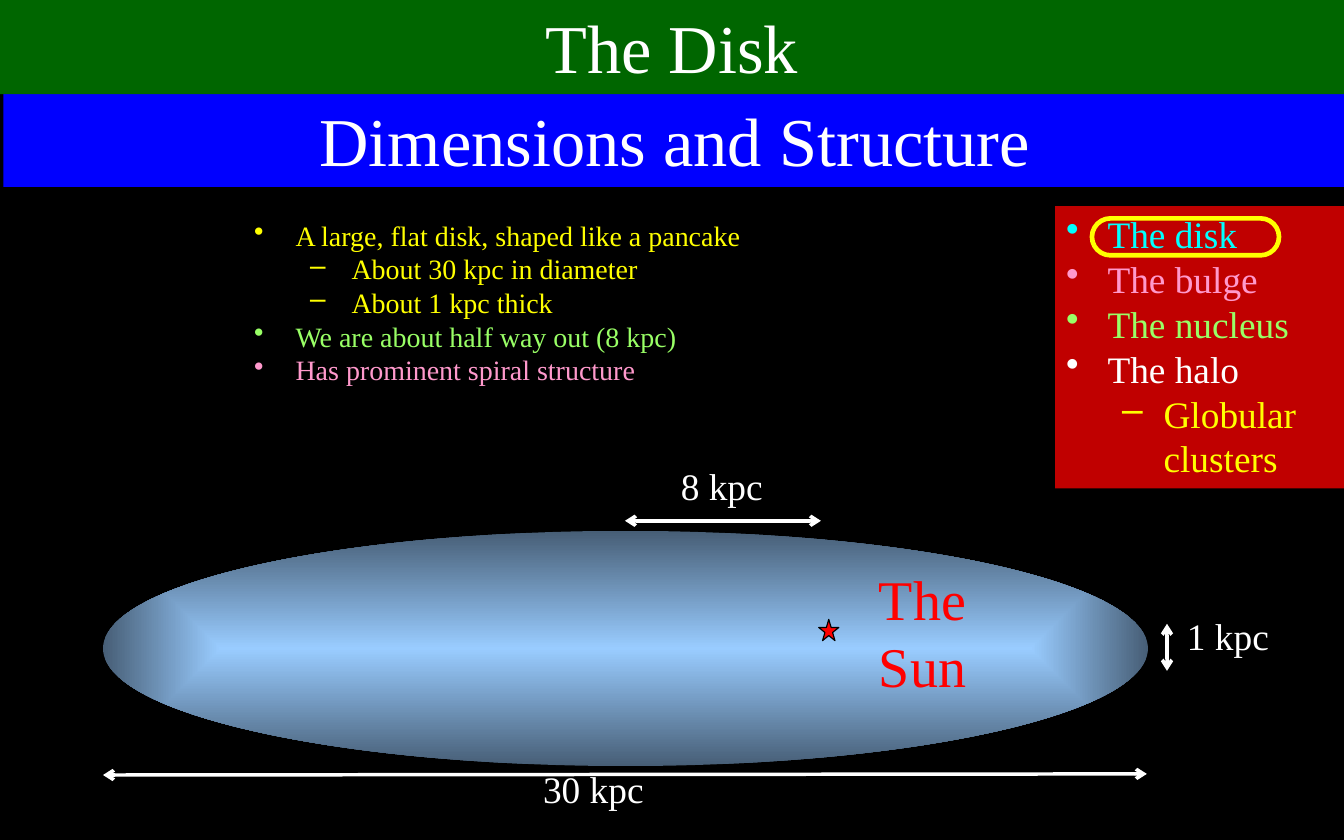
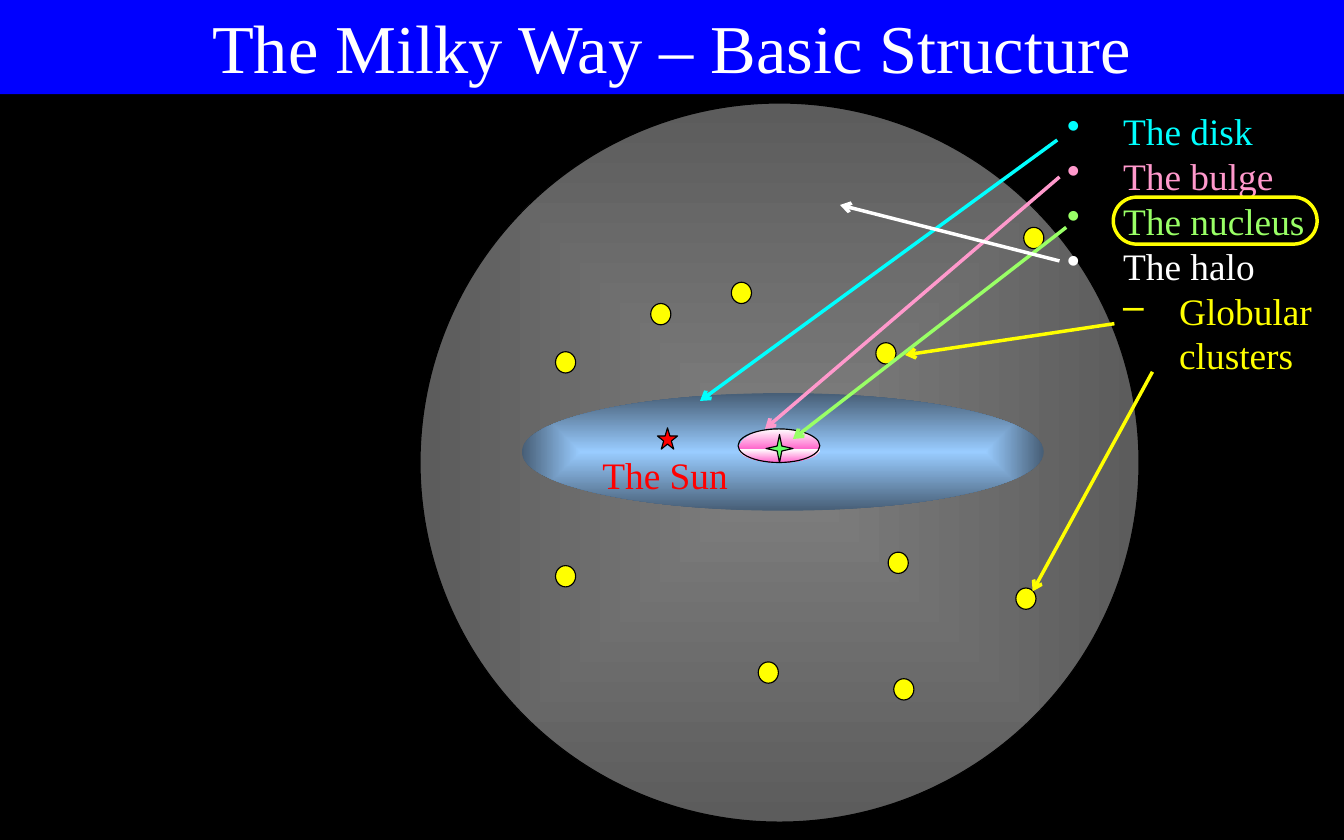
import math
import pptx
import pptx.dml.color
import pptx.enum.shapes
import pptx.enum.text
import pptx.oxml
import pptx.oxml.ns
import pptx.util

Inches = pptx.util.Inches
Pt = pptx.util.Pt
MSO = pptx.enum.shapes.MSO_SHAPE


class Theme:
    font = "Times New Roman"
    black = "000000"
    white = "FFFFFF"
    blue = "0000FF"
    green = "006600"
    crimson = "C00000"
    red = "FF0000"
    yellow = "FFFF00"
    cyan = "00FFFF"
    pink = "FF99CC"
    lime = "99FF66"
    nucleus = "66FF66"
    bulge = "FF66CC"
    disk = ("99CCFF", "475E76")
    halo = ("808080", "5C5C5C")
    title_size = 44
    large_size = 36
    label_size = 24
    body_size = 18
    outline = 0.75
    arrow = 2.25


RADIAL = ('<a:path path="shape"><a:fillToRect l="50000" t="50000" '
          'r="50000" b="50000"/></a:path>')
LINEAR = '<a:lin ang="5400000" scaled="1"/>'

PARTS = [
    ("The disk", 0, Theme.cyan),
    ("The bulge", 0, Theme.pink),
    ("The nucleus", 0, Theme.lime),
    ("The halo", 0, Theme.white),
    ("Globular clusters", 1, Theme.yellow),
]
DISK_FACTS = [
    ("A large, flat disk, shaped like a pancake", 0, Theme.yellow),
    ("About 30 kpc in diameter", 1, Theme.yellow),
    ("About 1 kpc thick", 1, Theme.yellow),
    ("We are about half way out (8 kpc)", 0, Theme.lime),
    ("Has prominent spiral structure", 0, Theme.pink),
]
CLUSTERS = [
    (7.82, 3.06), (5.81, 2.71), (4.96, 3.14), (6.53, 2.52), (4.96, 5.05),
    (6.77, 5.91), (7.93, 4.93), (9.14, 2.03), (7.98, 6.06), (9.07, 5.25),
]
POINTERS = [
    ((9.44, 1.25), (6.25, 3.58), Theme.cyan),
    ((9.46, 1.58), (6.83, 3.83), Theme.pink),
    ((9.52, 2.03), (7.08, 3.92), Theme.lime),
    ((9.46, 2.33), (7.5, 1.83), Theme.white),
    ((9.95, 2.89), (8.08, 3.17), Theme.yellow),
    ((10.29, 3.32), (9.22, 5.28), Theme.yellow),
]


def rgb(color):
    return pptx.dml.color.RGBColor.from_string(color)


def set_all(obj, values):
    for name, value in values.items():
        setattr(obj, name, value)


def xml(tag, attrs="", inner=""):
    ns = pptx.oxml.ns.nsdecls("a")
    return pptx.oxml.parse_xml(f"<a:{tag} {ns} {attrs}>{inner}</a:{tag}>")


def style_shape(sp, fill=None, line=None, width=Theme.outline):
    sp.shadow.inherit = False
    if fill:
        sp.fill.solid()
        sp.fill.fore_color.rgb = rgb(fill)
    else:
        sp.fill.background()
    if line:
        sp.line.color.rgb = rgb(line)
        sp.line.width = Pt(width)
    else:
        sp.line.fill.background()


def add_shape(slide, kind, box, **style):
    sp = slide.shapes.add_shape(kind, *map(Inches, box))
    style_shape(sp, **style)
    return sp


def set_gradient(sp, colors, direction):
    stops = "".join(
        f'<a:gs pos="{i * 100000}"><a:srgbClr val="{c}"/></a:gs>'
        for i, c in enumerate(colors))
    sp.fill.background()
    spPr = sp._element.spPr
    old = spPr.find(pptx.oxml.ns.qn("a:noFill"))
    new = xml("gradFill", 'rotWithShape="1"',
              f"<a:gsLst>{stops}</a:gsLst>{direction}")
    spPr.replace(old, new)


def add_glow(slide, box, colors, **style):
    sp = add_shape(slide, MSO.OVAL, box, **style)
    set_gradient(sp, colors, RADIAL)


def write(p, text, size, color):
    r = p.add_run()
    r.text = text
    set_all(r.font, {"name": Theme.font, "size": Pt(size)})
    r.font.color.rgb = rgb(color)


def prepare_frame(sp):
    tf = sp.text_frame
    set_all(tf, {
        "word_wrap": True,
        "vertical_anchor": pptx.enum.text.MSO_ANCHOR.TOP,
    })
    return tf


def add_label(slide, text, box, size=Theme.label_size, color=Theme.white):
    sp = slide.shapes.add_textbox(*map(Inches, box))
    write(prepare_frame(sp).paragraphs[0], text, size, color)


def add_band(slide, text, left, top, fill):
    sp = add_shape(slide, MSO.RECTANGLE, (left, top, 12, 0.84), fill=fill)
    p = prepare_frame(sp).paragraphs[0]
    p.alignment = pptx.enum.text.PP_ALIGN.CENTER
    write(p, text, Theme.title_size, Theme.white)


def add_bullets(slide, items, box, size, hang, fill=None):
    if fill:
        sp = add_shape(slide, MSO.RECTANGLE, box, fill=fill)
    else:
        sp = slide.shapes.add_textbox(*map(Inches, box))
    tf = prepare_frame(sp)
    for i, (text, level, color) in enumerate(items):
        p = tf.add_paragraph() if i else tf.paragraphs[0]
        set_all(p, {"level": level,
                    "alignment": pptx.enum.text.PP_ALIGN.LEFT})
        pPr = p._p.get_or_add_pPr()
        pPr.set("marL", str(Inches(hang + 0.5 * level)))
        pPr.set("indent", str(Inches(-hang)))
        pPr.append(xml("buChar", f'char="{"•–"[level]}"'))
        write(p, text, size, color)


def add_arrow(slide, start, end, color=Theme.white, both=False):
    sp = slide.shapes.add_connector(
        pptx.enum.shapes.MSO_CONNECTOR.STRAIGHT,
        *map(Inches, (*start, *end)))
    sp.line.color.rgb = rgb(color)
    sp.line.width = Pt(Theme.arrow)
    spPr = sp._element.spPr
    ln = spPr.find(pptx.oxml.ns.qn("a:ln"))
    for tag in ("headEnd", "tailEnd") if both else ("tailEnd",):
        ln.append(xml(tag, 'type="arrow"'))
    spPr.append(xml("effectLst"))


def add_highlight(slide, box, width):
    sp = add_shape(slide, MSO.ROUNDED_RECTANGLE, box,
                   line=Theme.yellow, width=width)
    sp.adjustments[0] = 0.5


def add_sun(slide, left, top):
    add_shape(slide, MSO.STAR_5_POINT, (left, top, 0.18, 0.19),
              fill=Theme.red, line=Theme.black)


def add_half_oval(slide, center, rx, ry, colors):
    cx, cy = center
    points = [(Inches(cx + rx * math.cos(a)), Inches(cy + ry * math.sin(a)))
              for a in (math.pi * i / 36 for i in range(37))]
    fb = slide.shapes.build_freeform(*points[0])
    fb.add_line_segments(points[1:], close=True)
    sp = fb.convert_to_shape()
    style_shape(sp)
    set_gradient(sp, colors, LINEAR)


def add_bulge(slide):
    center = (6.96, 4.01)
    add_half_oval(slide, center, 0.36, -0.18, (Theme.white, Theme.bulge))
    add_half_oval(slide, center, 0.36, 0.12, (Theme.white, Theme.bulge))
    add_shape(slide, MSO.OVAL, (6.59, 3.83, 0.73, 0.3), line=Theme.black)
    sp = add_shape(slide, MSO.STAR_4_POINT, (6.84, 3.88, 0.24, 0.25),
                   fill=Theme.nucleus, line=Theme.black)
    sp.adjustments[0] = 0.125


def add_slide(prs):
    slide = prs.slides.add_slide(prs.slide_layouts[6])
    fill = slide.background.fill
    fill.solid()
    fill.fore_color.rgb = rgb(Theme.black)
    return slide


def build_disk(prs):
    slide = add_slide(prs)
    add_band(slide, "Dimensions and Structure", 0.03, 0.83, Theme.blue)
    add_bullets(slide, PARTS, (9.42, 1.84, 2.58, 2.52), Theme.label_size,
                0.37, Theme.crimson)
    add_highlight(slide, (9.75, 1.95, 1.67, 0.33), 3)
    add_glow(slide, (0.92, 4.74, 9.33, 2.1), Theme.disk)
    add_sun(slide, 7.31, 5.53)
    add_label(slide, "The Sun", (7.75, 4.99, 1.03, 1.31),
              Theme.large_size, Theme.red)
    add_label(slide, "30 kpc", (4.75, 6.79, 3.08, 0.5))
    add_arrow(slide, (0.92, 6.92), (10.24, 6.91), both=True)
    add_arrow(slide, (10.42, 5.99), (10.42, 5.57), both=True)
    add_label(slide, "1 kpc", (10.5, 5.43, 1.33, 0.5))
    add_bullets(slide, DISK_FACTS, (2.17, 1.9, 6.42, 1.62),
                Theme.body_size, 0.37)
    add_arrow(slide, (5.58, 4.65), (7.33, 4.65), both=True)
    add_label(slide, "8 kpc", (5.98, 4.09, 1.19, 0.5))
    add_band(slide, "The Disk", 0, 0, Theme.green)


def build_milky_way(prs):
    slide = add_slide(prs)
    add_glow(slide, (3.75, 0.92, 6.42, 6.42), Theme.halo, line=Theme.black)
    add_glow(slide, (4.66, 3.51, 4.66, 1.05), Theme.disk)
    add_bulge(slide)
    for left, top in CLUSTERS:
        add_shape(slide, MSO.OVAL, (left, top, 0.18, 0.19),
                  fill=Theme.yellow, line=Theme.black)
    add_sun(slide, 5.87, 3.82)
    add_label(slide, "The Sun", (5.28, 3.99, 1.36, 0.5), color=Theme.red)
    add_band(slide, "The Milky Way – Basic Structure", 0, 0, Theme.blue)
    add_bullets(slide, PARTS, (9.43, 0.92, 2.58, 2.52),
                Theme.label_size, 0.5)
    for start, end, color in POINTERS:
        add_arrow(slide, start, end, color)
    add_highlight(slide, (9.94, 1.76, 1.82, 0.42), 2.25)


def main():
    prs = pptx.Presentation()
    set_all(prs, {"slide_width": Inches(12), "slide_height": Inches(7.5)})
    build_disk(prs)
    build_milky_way(prs)
    prs.save("out.pptx")


if __name__ == "__main__":
    main()
